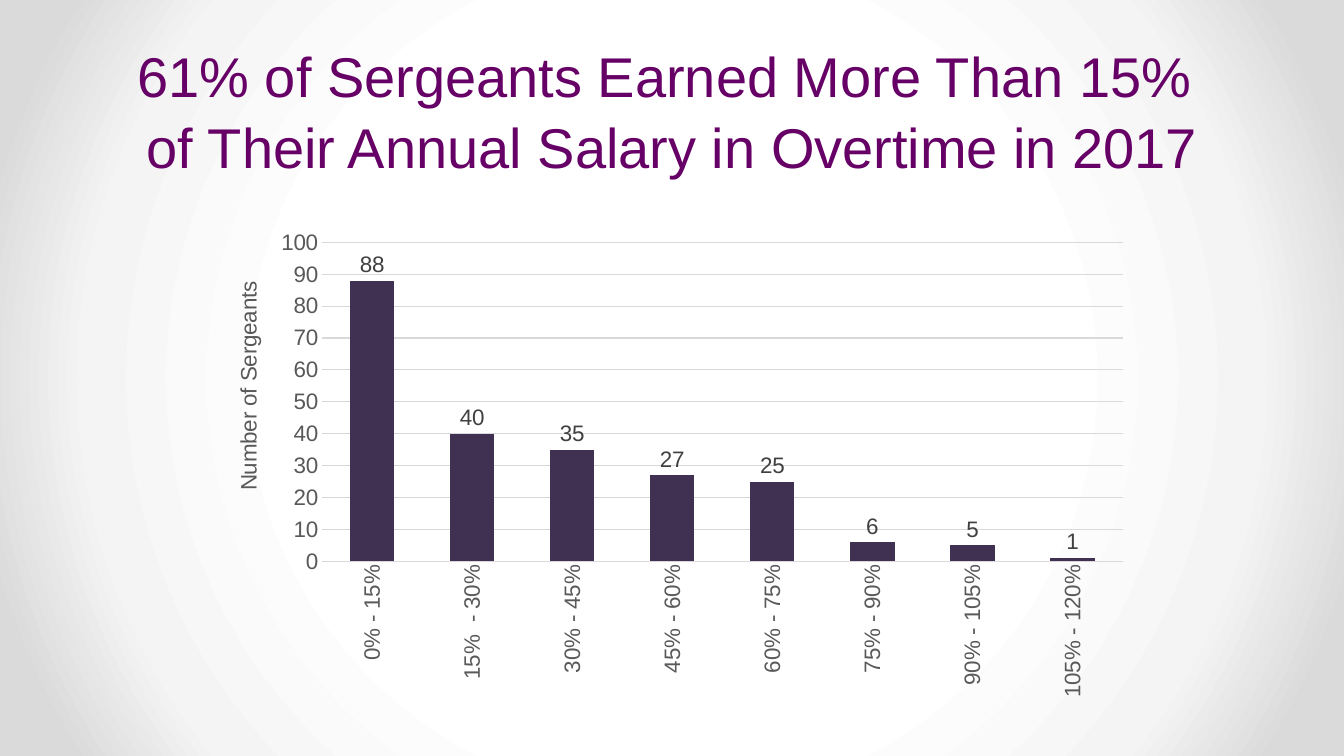
from lxml.etree import SubElement
from pptx import Presentation
from pptx.chart.data import CategoryChartData
from pptx.dml.color import RGBColor
from pptx.enum.chart import XL_CHART_TYPE as ChartType
from pptx.enum.chart import XL_LABEL_POSITION as LabelPosition
from pptx.enum.chart import XL_TICK_MARK as TickMark
from pptx.enum.text import MSO_ANCHOR, PP_ALIGN
from pptx.oxml.ns import qn
from pptx.util import Inches, Pt

FONT = "Arial"
COLORS = {
    "title": "660066",
    "bars": "403152",
    "values": "404040",
    "axes": "595959",
    "grid": "D9D9D9",
    "text": "000000",
}
BACKDROP = [(50, "FFFFFF"), (76, "F4F4F4"), (92, "DADADA")]
TITLE_LINES = [
    "61% of Sergeants Earned More Than 15% ",
    "of Their Annual Salary in Overtime in 2017",
]
SERGEANTS = {
    "0% - 15%": 88,
    "15%  - 30%": 40,
    "30% - 45%": 35,
    "45% - 60%": 27,
    "60% - 75%": 25,
    "75% - 90%": 6,
    "90% - 105%": 5,
    "105% - 120%": 1,
}


def color(name):
    return RGBColor.from_string(COLORS[name])


def style_font(font, size, name):
    font.name = FONT
    font.size = Pt(size)
    font.bold = False
    font.color.rgb = color(name)


def style_line(line, name):
    line.color.rgb = color(name)
    line.width = Pt(0.75)


def turn_upright(text_body):
    """Turn chart text so that it reads from bottom to top."""
    body = text_body.find(qn("a:bodyPr"))
    body.set("rot", "-5400000")
    body.set("vert", "horz")


def place_in_chart(parent, index, **fractions):
    """Set a manual layout, given as fractions of the chart."""
    for old in parent.findall(qn("c:layout")):
        parent.remove(old)
    layout = SubElement(parent, qn("c:layout"))
    parent.insert(index, layout)
    manual = SubElement(layout, qn("c:manualLayout"))
    if "w" in fractions:
        SubElement(manual, qn("c:layoutTarget")).set("val", "inner")
    for mode in ("xMode", "yMode"):
        SubElement(manual, qn(f"c:{mode}")).set("val", "edge")
    for key, value in fractions.items():
        SubElement(manual, qn(f"c:{key}")).set("val", str(value))


def paint_backdrop(slide):
    """Radial gradient from the centre of the slide."""
    slide.background.fill.gradient()
    gradient = slide.element.find(".//" + qn("a:gradFill"))
    for child in list(gradient):
        gradient.remove(child)
    stops = SubElement(gradient, qn("a:gsLst"))
    for percent, shade in BACKDROP:
        stop = SubElement(stops, qn("a:gs"), pos=str(percent * 1000))
        SubElement(stop, qn("a:srgbClr"), val=shade)
    circle = SubElement(gradient, qn("a:path"), path="circle")
    sides = dict.fromkeys("ltrb", "50000")
    SubElement(circle, qn("a:fillToRect"), **sides)


def write_title(slide):
    title = slide.shapes.title
    title.left, title.top = Inches(0), Inches(0)
    title.width, title.height = Inches(13.33), Inches(1.83)
    title.text_frame.vertical_anchor = MSO_ANCHOR.BOTTOM
    headline = title.text_frame.paragraphs[0]
    headline.alignment = PP_ALIGN.CENTER
    headline.line_spacing = 1.05
    for number, words in enumerate(TITLE_LINES):
        if number:
            headline.add_line_break()
        run = headline.add_run()
        run.text = words
        style_font(run.font, 40, "title")


def style_axis(axis):
    axis.major_tick_mark = TickMark.NONE
    axis.minor_tick_mark = TickMark.NONE
    style_font(axis.tick_labels.font, 16, "axes")


def style_salary_axis(axis):
    style_axis(axis)
    style_line(axis.format.line, "grid")
    turn_upright(axis.tick_labels.font and axis._element.find(qn("c:txPr")))


def style_count_axis(axis):
    style_axis(axis)
    axis.minimum_scale, axis.maximum_scale, axis.major_unit = 0, 100, 10
    axis.format.line.fill.background()
    style_line(axis.major_gridlines.format.line, "grid")
    caption = axis.axis_title
    run = caption.text_frame.paragraphs[0].add_run()
    run.text = "Number of Sergeants"
    style_font(run.font, 16, "axes")
    turn_upright(caption.text_frame._txBody)
    place_in_chart(caption._element, 1, x=0.03, y=0.17)


def style_bars(plot):
    plot.gap_width = 125
    plot.overlap = -27
    plot.vary_by_categories = False
    bars = plot.series[0]
    bars.format.fill.solid()
    bars.format.fill.fore_color.rgb = color("bars")
    labels = bars.data_labels
    labels.show_value = True
    labels.position = LabelPosition.OUTSIDE_END
    style_font(labels.font, 16, "values")


def add_overtime_chart(slide):
    data = CategoryChartData()
    data.categories = list(SERGEANTS)
    data.add_series("Series 1", list(SERGEANTS.values()))
    chart = slide.shapes.add_chart(
        ChartType.COLUMN_CLUSTERED,
        Inches(2), Inches(1.83), Inches(9.33), Inches(5.42), data,
    ).chart
    chart.has_title = False
    chart.has_legend = False
    style_font(chart.font, 16, "text")
    style_salary_axis(chart.category_axis)
    style_count_axis(chart.value_axis)
    style_bars(chart.plots[0])
    plot_area = chart._chartSpace.find(".//" + qn("c:plotArea"))
    place_in_chart(plot_area, 0, x=0.128, y=0.106, w=0.851, h=0.584)


def main():
    deck = Presentation()
    deck.slide_width, deck.slide_height = Inches(13.33), Inches(7.5)
    slide = deck.slides.add_slide(deck.slide_layouts.get_by_name("Title Only"))
    paint_backdrop(slide)
    write_title(slide)
    add_overtime_chart(slide)
    deck.save("out.pptx")


if __name__ == "__main__":
    main()
